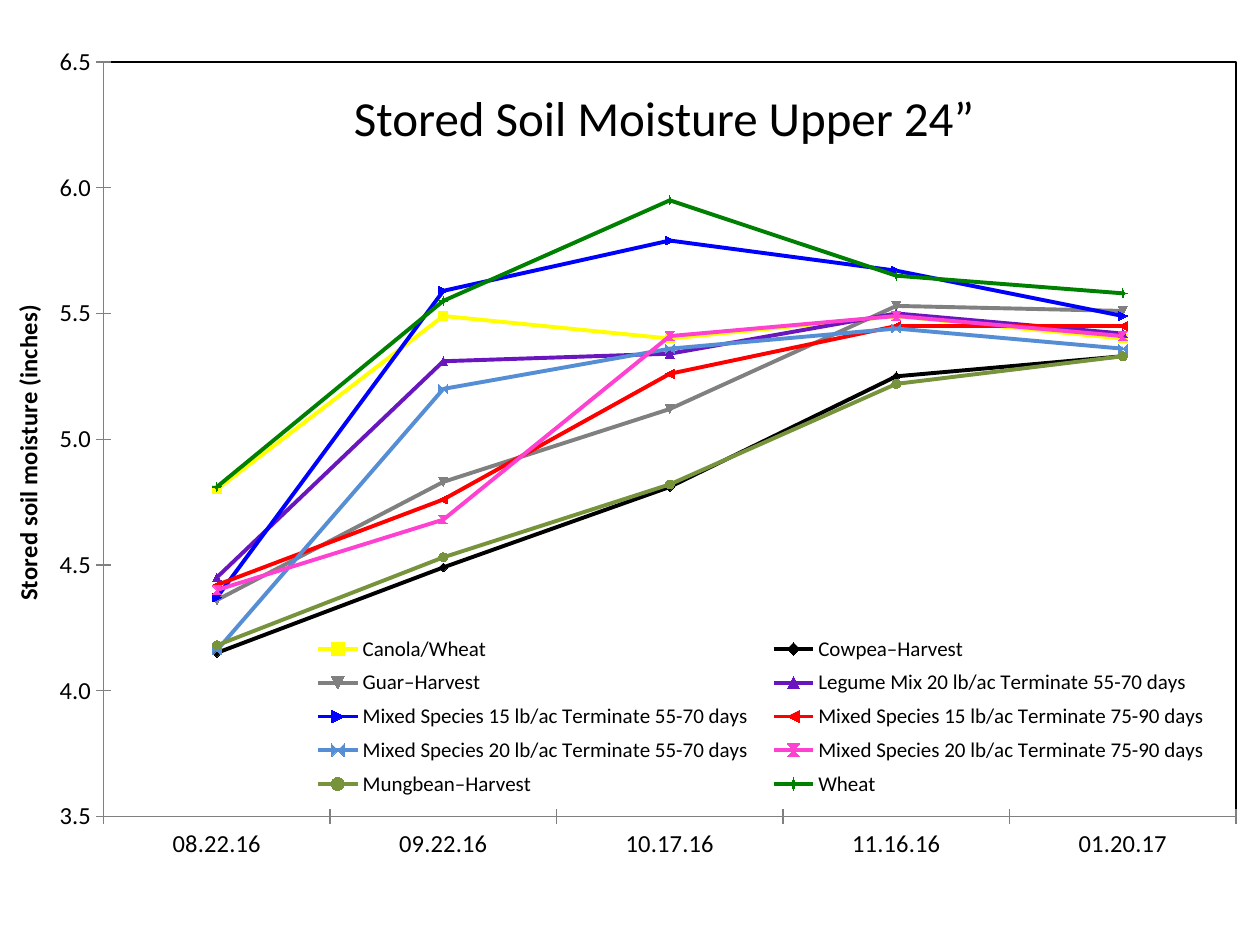
"""Build a slide with a line chart of stored soil moisture by cover crop."""
from lxml import etree
from pptx import Presentation
from pptx import util as u
from pptx.chart import data as cd
from pptx.dml.color import RGBColor
from pptx.enum import chart as ec, text as et
from pptx.oxml import ns, parse_xml

BLACK = RGBColor(0, 0, 0)
GRAY = RGBColor(0x80, 0x80, 0x80)
FONT = "Calibri"
DATES = ["08.22.16", "09.22.16", "10.17.16", "11.16.16", "01.20.17"]
MIX = "Mixed Species {} lb/ac Terminate {} days"
CROPS = [
    ("Canola/Wheat", RGBColor(0xFF, 0xFF, 0), (4.8, 5.49, 5.4, 5.49, 5.4)),
    ("Cowpea–Harvest", BLACK, (4.15, 4.49, 4.81, 5.25, 5.33)),
    ("Guar–Harvest", GRAY, (4.36, 4.83, 5.12, 5.53, 5.51)),
    ("Legume Mix 20 lb/ac Terminate 55-70 days", RGBColor(0x6A, 0x16, 0xBF), (4.45, 5.31, 5.34, 5.5, 5.42)),
    (MIX.format(15, "55-70"), RGBColor(0, 0, 0xFF), (4.37, 5.59, 5.79, 5.67, 5.49)),
    (MIX.format(15, "75-90"), RGBColor(0xFF, 0, 0), (4.42, 4.76, 5.26, 5.45, 5.45)),
    (MIX.format(20, "55-70"), RGBColor(0x55, 0x8E, 0xD5), (4.16, 5.2, 5.36, 5.44, 5.36)),
    (MIX.format(20, "75-90"), RGBColor(0xFF, 0x41, 0xD2), (4.4, 4.68, 5.41, 5.49, 5.41)),
    ("Mungbean–Harvest", RGBColor(0x77, 0x93, 0x3C), (4.18, 4.53, 4.82, 5.22, 5.33)),
    ("Wheat", RGBColor(0, 0x80, 0), (4.81, 5.55, 5.95, 5.65, 5.58)),
]


def place(node, spot, box, inner=False):
    """Give a chart part a manual layout, as shares of the chart."""
    for old in node.findall(ns.qn("c:layout")):
        node.remove(old)
    lay = etree.Element(ns.qn("c:layout"))
    man = etree.SubElement(lay, ns.qn("c:manualLayout"))
    pairs = [("layoutTarget", "inner")] if inner else []
    pairs += [("xMode", "edge"), ("yMode", "edge")] + list(zip("xywh", box))
    for tag, val in pairs:
        etree.SubElement(man, ns.qn("c:" + tag)).set("val", str(val))
    node.insert(spot, lay)


def frame(line):
    """Return unfilled shape properties with the given outline."""
    return parse_xml(f"<c:spPr {ns.nsdecls('c', 'a')}><a:noFill/>{line}</c:spPr>")


prs = Presentation()
prs.slide_width, prs.slide_height = u.Inches(10), u.Inches(7.5)
W, H = prs.slide_width, prs.slide_height
slide = prs.slides.add_slide(prs.slide_layouts[5])

title = slide.shapes.title
title.left, title.top = int(W * 0.15), int(H * 0.07)
title.width, title.height = int(W * 0.754), int(H * 0.107)
title.text_frame.vertical_anchor = et.MSO_ANCHOR.MIDDLE
para = title.text_frame.paragraphs[0]
para.alignment = et.PP_ALIGN.CENTER
run = para.add_run()
run.text = "Stored Soil Moisture Upper 24”"
run.font.size, run.font.name = u.Pt(28), FONT
run.font.color.rgb = BLACK

data = cd.CategoryChartData(number_format="0.00")
data.categories = DATES
for name, _, vals in CROPS:
    data.add_series(name, vals)
chart = slide.shapes.add_chart(
    ec.XL_CHART_TYPE.LINE_MARKERS, int(W * 0.005), int(H * 0.037),
    int(W * 0.99), int(H * 0.896), data).chart
chart.has_title = False
chart.font.size, chart.font.name = u.Pt(10), FONT
chart.font.color.rgb = BLACK
chart.plots[0].vary_by_categories = False

for line, (_, hue, _) in zip(chart.plots[0].series, CROPS):
    line.smooth = False
    line.format.line.width = u.Pt(2.25)
    line.format.line.color.rgb = hue
    mark = line.marker
    mark.style, mark.size = ec.XL_MARKER_STYLE.AUTOMATIC, 5
    mark.format.fill.solid()
    mark.format.fill.fore_color.rgb = hue
    mark.format.line.color.rgb = hue

cat, val = chart.category_axis, chart.value_axis
for axis in (cat, val):
    axis.has_major_gridlines = False
    axis.major_tick_mark = ec.XL_TICK_MARK.CROSS
    axis.minor_tick_mark = ec.XL_TICK_MARK.NONE
    axis.format.line.color.rgb = GRAY
    axis.format.line.width = u.Pt(0.75)
    font = axis.tick_labels.font
    font.size, font.name = u.Pt(14), FONT
    font.color.rgb = BLACK
val.minimum_scale, val.maximum_scale, val.major_unit = 3.5, 6.5, 0.5
val.tick_labels.number_format = "0.0"
val.tick_labels.number_format_is_linked = False
run = val.axis_title.text_frame.paragraphs[0].add_run()
run.text = "Stored soil moisture (inches)"
run.font.size, run.font.name, run.font.bold = u.Pt(14), FONT, True
run.font.color.rgb = BLACK

chart.has_legend = True
key = chart.legend
key.position = ec.XL_LEGEND_POSITION.RIGHT
key.include_in_layout = False
key.font.size, key.font.name = u.Pt(12), FONT
key.font.color.rgb = BLACK
root = chart.element
area = root.find(".//" + ns.qn("c:plotArea"))
place(root.find(".//" + ns.qn("c:legend")), 1, (0.235, 0.7, 0.74, 0.21))
place(area, 0, (0.078, 0.032, 0.908, 0.891), inner=True)
area.append(frame(f'<a:ln w="9525"><a:solidFill><a:srgbClr val="{BLACK}"/></a:solidFill></a:ln>'))
root.find(ns.qn("c:chart")).addnext(frame("<a:ln><a:noFill/></a:ln>"))

prs.save("out.pptx")
